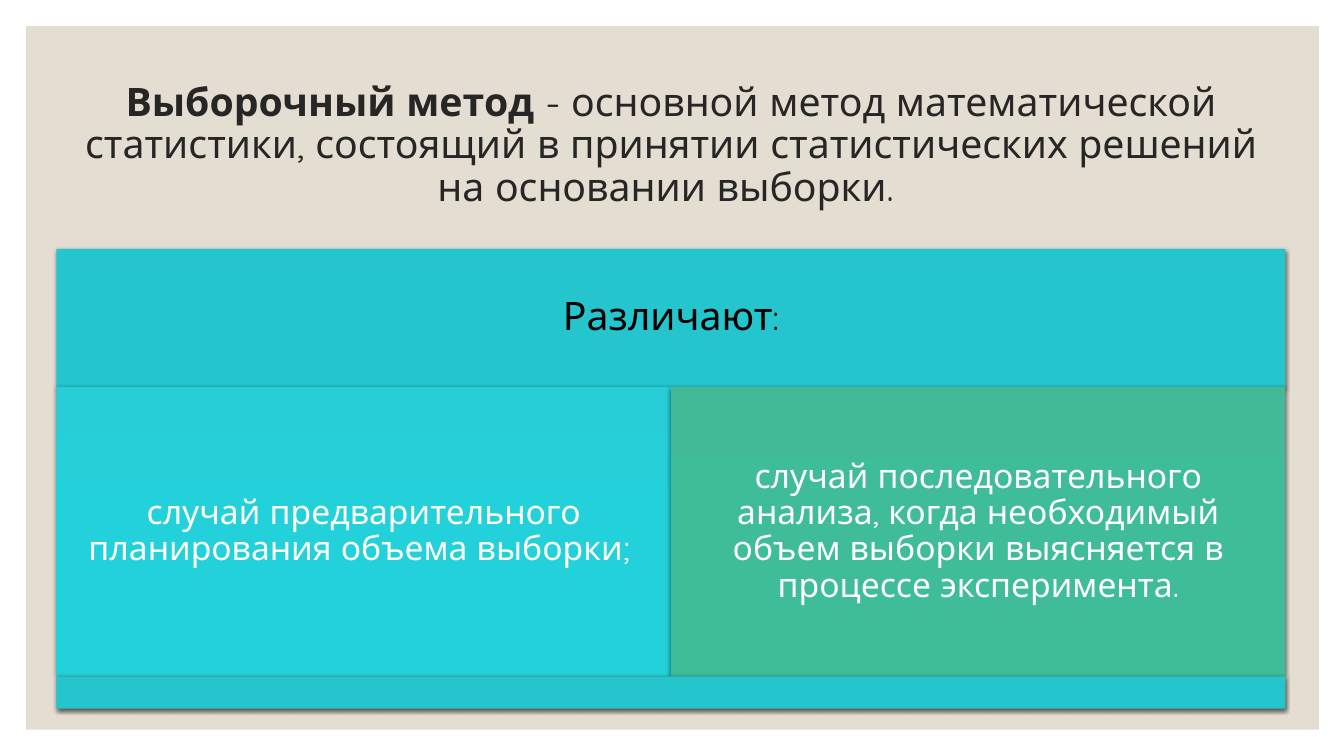
from dataclasses import dataclass

from lxml import etree
from pptx import Presentation
from pptx.dml.color import RGBColor
from pptx.enum.shapes import MSO_SHAPE
from pptx.enum.text import MSO_ANCHOR, MSO_AUTO_SIZE, PP_ALIGN
from pptx.oxml.ns import qn
from pptx.shapes.autoshape import Shape
from pptx.slide import Slide
from pptx.text.text import TextFrame
from pptx.util import Inches, Pt

RECTANGLE = MSO_SHAPE.RECTANGLE
CENTER = PP_ALIGN.CENTER
MIDDLE = MSO_ANCHOR.MIDDLE
NO_AUTOFIT = MSO_AUTO_SIZE.NONE

TITLE_ONLY_LAYOUT = 5
FONT = "Quicksand"
LEFT, WIDTH = 0.56, 12.19
HEADER_TOP, HEADER_HEIGHT = 2.47, 1.37
CASES_TOP, CASES_HEIGHT = HEADER_TOP + HEADER_HEIGHT, 2.87
FOOTER_TOP, FOOTER_HEIGHT = CASES_TOP + CASES_HEIGHT, 0.32
BAND_COLOR = "25C5CD"


@dataclass(frozen=True)
class Case:
    text: str
    gradient: tuple[str, str, str]


CASES = (
    Case("случай предварительного планирования объема выборки; ",
         ("27CED7", "22D1DA", "22D0D9")),
    Case("случай последовательного анализа, когда необходимый объем выборки "
         "выясняется в процессе эксперимента.",
         ("42BA97", "3FBC98", "3EBB97")),
)


def color(value: str) -> RGBColor:
    return RGBColor.from_string(value)


def add_block(slide: Slide, left: float, top: float, width: float,
              height: float, fill: str) -> Shape:
    block = slide.shapes.add_shape(
        RECTANGLE, Inches(left), Inches(top), Inches(width), Inches(height))
    block.fill.solid()
    block.fill.fore_color.rgb = color(fill)
    block.line.fill.background()
    block.shadow.inherit = False
    return block


def add_shadow(block: Shape) -> None:
    effects = block.element.spPr.find(qn("a:effectLst"))
    shadow = etree.SubElement(
        effects, qn("a:outerShdw"), blurRad=str(Pt(3)), dist=str(Pt(1)),
        dir="5400000", algn="ctr", rotWithShape="0")
    tint = etree.SubElement(shadow, qn("a:srgbClr"), val="000000")
    etree.SubElement(tint, qn("a:alpha"), val="63000")


def set_gradient(block: Shape, colors: tuple[str, str, str]) -> None:
    block.fill.gradient()
    block.fill.gradient_angle = 270
    stops = block.element.spPr.find(qn("a:gradFill")).find(qn("a:gsLst"))
    for stop in list(stops):
        stops.remove(stop)
    for position, value in zip((0, 50000, 100000), colors):
        stop = etree.SubElement(stops, qn("a:gs"), pos=str(position))
        etree.SubElement(stop, qn("a:srgbClr"), val=value)


def write(frame: TextFrame, texts: tuple[str, ...], size: int,
          font_color: str) -> None:
    frame.word_wrap = True
    frame.auto_size = NO_AUTOFIT
    frame.vertical_anchor = MIDDLE
    paragraph = frame.paragraphs[0]
    paragraph.alignment = CENTER
    paragraph.line_spacing = 0.9
    paragraph.font.name = FONT
    paragraph.font.size = Pt(size)
    paragraph.font.color.rgb = color(font_color)
    for text in texts:
        paragraph.add_run().text = text


def set_margins(frame: TextFrame, margin: float) -> None:
    frame.margin_left = frame.margin_right = Inches(margin)
    frame.margin_top = frame.margin_bottom = Inches(margin)


def add_title(slide: Slide) -> None:
    title = slide.shapes.title
    title.left, title.top = Inches(LEFT), Inches(0.7)
    title.width, title.height = Inches(WIDTH), Inches(1.5)
    write(title.text_frame,
          ("Выборочный метод ",
           "- основной метод математической статистики, состоящий в принятии "
           "статистических решений на основании выборки. "),
          28, "262626")
    term, definition = title.text_frame.paragraphs[0].runs
    term.font.bold = True
    definition.font.bold = False


def add_header(slide: Slide) -> None:
    header = add_block(slide, LEFT, HEADER_TOP, WIDTH, HEADER_HEIGHT, BAND_COLOR)
    add_shadow(header)
    set_margins(header.text_frame, 0.12)
    write(header.text_frame, ("Различают", ":"), 28, "000000")
    header.text_frame.paragraphs[0].runs[1].font.size = Pt(24)


def add_cases(slide: Slide) -> None:
    case_width = WIDTH / len(CASES)
    for index, case in enumerate(CASES):
        panel = add_block(slide, LEFT + index * case_width, CASES_TOP,
                          case_width, CASES_HEIGHT, case.gradient[0])
        set_gradient(panel, case.gradient)
        add_shadow(panel)
        set_margins(panel.text_frame, 0.1)
        write(panel.text_frame, (case.text,), 24, "FFFFFF")


def main() -> None:
    presentation = Presentation()
    presentation.slide_width = Inches(13.33)
    presentation.slide_height = Inches(7.5)
    slide = presentation.slides.add_slide(
        presentation.slide_layouts[TITLE_ONLY_LAYOUT])
    slide.background.fill.solid()
    slide.background.fill.fore_color.rgb = color("FFFFFF")

    backdrop = add_block(slide, 0.26, 0.26, 12.82, 6.98, "E3DED1")
    slide.shapes.title.element.addprevious(backdrop.element)
    add_title(slide)
    add_header(slide)
    add_cases(slide)
    footer = add_block(slide, LEFT, FOOTER_TOP, WIDTH, FOOTER_HEIGHT, BAND_COLOR)
    add_shadow(footer)

    presentation.save("out.pptx")


if __name__ == "__main__":
    main()
